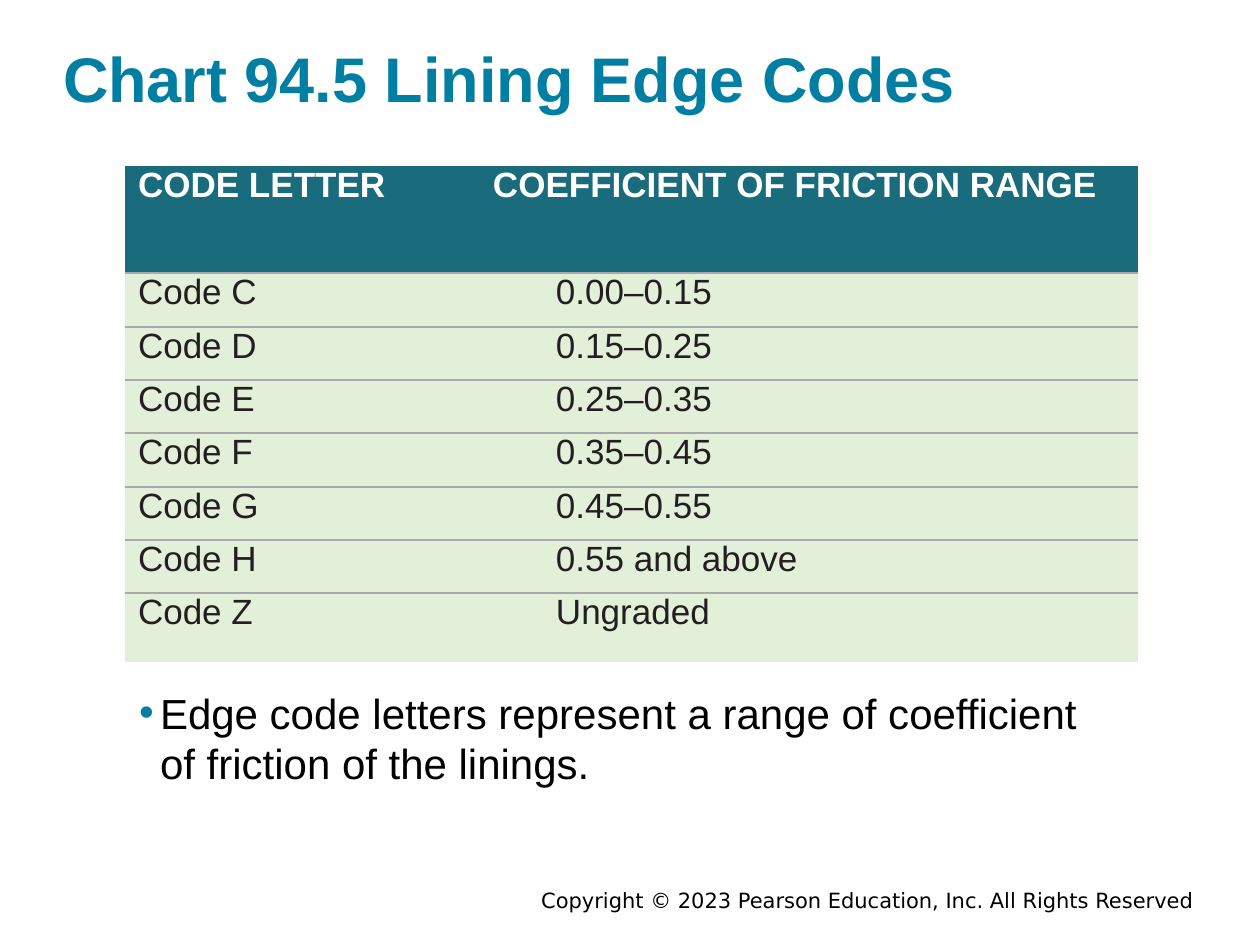
import pptx
import pptx.dml.color
import pptx.enum.text
import pptx.oxml.ns
import pptx.util
from lxml import etree

RGBColor = pptx.dml.color.RGBColor
ALIGN = pptx.enum.text.PP_ALIGN
ANCHOR = pptx.enum.text.MSO_ANCHOR
qn = pptx.oxml.ns.qn

BLUE = RGBColor(0x00, 0x7F, 0xA3)
TEAL = RGBColor(0x1A, 0x6C, 0x7C)
GREEN = RGBColor(0xE2, 0xEF, 0xD9)
GRAY = RGBColor(0xA7, 0xA9, 0xAC)
INK = RGBColor(0x23, 0x1F, 0x20)
BLACK = RGBColor(0, 0, 0)
WHITE = RGBColor(0xFF, 0xFF, 0xFF)

SCALE = pptx.util.Inches(10) / 1260
NO_STYLE = "{2D5ABB26-0587-4C30-8999-92F81FD0307C}"

HEAD = ("CODE LETTER", "COEFFICIENT OF FRICTION RANGE")
CODES = [
    ("Code C", "0.00–0.15"),
    ("Code D", "0.15–0.25"),
    ("Code E", "0.25–0.35"),
    ("Code F", "0.35–0.45"),
    ("Code G", "0.45–0.55"),
    ("Code H", "0.55 and above"),
    ("Code Z", "Ungraded"),
]
COLS = (309, 704)
ROWS = [107] + [54, 53, 53] * 2 + [69]


def px(num):
    return pptx.util.Emu(round(num * SCALE))


def write(frame, text, size, color, font="Arial", bold=False,
          align=ALIGN.LEFT, bullet=None):
    """Fill a text frame with one formatted paragraph."""
    frame.word_wrap = True
    para = frame.paragraphs[0]
    para.text = text
    if bullet:
        add_bullet(para, bullet)
    para.alignment = align
    para.space_before = pptx.util.Pt(0)
    face = para.runs[0].font
    face.name = font
    face.size = pptx.util.Pt(size)
    face.bold = bold
    face.color.rgb = color


def add_bullet(para, color):
    props = para._p.get_or_add_pPr()
    props.set("marL", str(px(35)))
    props.set("indent", str(px(-21)))
    tint = etree.SubElement(props, qn("a:buClr"))
    etree.SubElement(tint, qn("a:srgbClr"), val=str(color))
    etree.SubElement(props, qn("a:buFont"), typeface="Arial")
    etree.SubElement(props, qn("a:buChar"), char="•")


def place(shape, left, top, width, height, anchor, side=0):
    """Set a text shape's box, anchor and side margins."""
    shape.left, shape.top = px(left), px(top)
    shape.width, shape.height = px(width), px(height)
    frame = shape.text_frame
    frame.auto_size = pptx.enum.text.MSO_AUTO_SIZE.NONE
    frame.vertical_anchor = anchor
    frame.margin_left = frame.margin_right = px(side)
    frame.margin_top = frame.margin_bottom = px(6)
    return frame


def rule(cell, tag):
    """Draw a thin gray border on one side of a cell."""
    line = etree.Element(qn(tag), w=str(pptx.util.Pt(1)))
    fill = etree.SubElement(line, qn("a:solidFill"))
    etree.SubElement(fill, qn("a:srgbClr"), val=str(GRAY))
    cell._tc.get_or_add_tcPr().insert(0, line)


def add_codes(slide):
    frame = slide.shapes.add_table(len(ROWS), len(COLS), px(125), px(166),
                                   px(sum(COLS)), px(sum(ROWS)))
    table = frame.table
    table.horz_banding = False
    for style in frame.element.iter(qn("a:tableStyleId")):
        style.text = NO_STYLE
    for col, width in zip(table.columns, COLS):
        col.width = px(width)
    for r, (row, height) in enumerate(zip(table.rows, ROWS)):
        row.height = px(height)
        head = r == 0
        texts = HEAD if head else CODES[r - 1]
        lefts = (13, 59 if head else 122)
        for cell, text, left in zip(row.cells, texts, lefts):
            cell.margin_left = px(left)
            cell.margin_right = cell.margin_top = cell.margin_bottom = 0
            cell.fill.solid()
            cell.fill.fore_color.rgb = TEAL if head else GREEN
            write(cell.text_frame, text, 20, WHITE if head else INK, bold=head)
            if r < len(ROWS) - 1:
                rule(cell, "a:lnB")
            if r > 0:
                rule(cell, "a:lnT")


def main():
    deck = pptx.Presentation()
    deck.slide_width, deck.slide_height = px(1260), px(945)
    slide = deck.slides.add_slide(deck.slide_layouts[1])
    title, body = slide.placeholders

    frame = place(title, 63, 31, 1134, 90, ANCHOR.BOTTOM)
    write(frame, "Chart 94.5 Lining Edge Codes", 36, BLUE, bold=True)

    add_codes(slide)

    frame = place(body, 125, 680, 992, 115, ANCHOR.MIDDLE)
    write(frame, "Edge code letters represent a range of coefficient "
          "of friction of the linings.", 24, BLACK, bullet=BLUE)

    note = slide.shapes.add_textbox(0, 0, 0, 0)
    frame = place(note, 220, 886, 987, 28, ANCHOR.MIDDLE, side=13)
    write(frame, "Copyright © 2023 Pearson Education, Inc. All Rights Reserved",
          12, BLACK, font="DejaVu Sans", align=ALIGN.RIGHT)

    deck.save("out.pptx")


if __name__ == "__main__":
    main()
